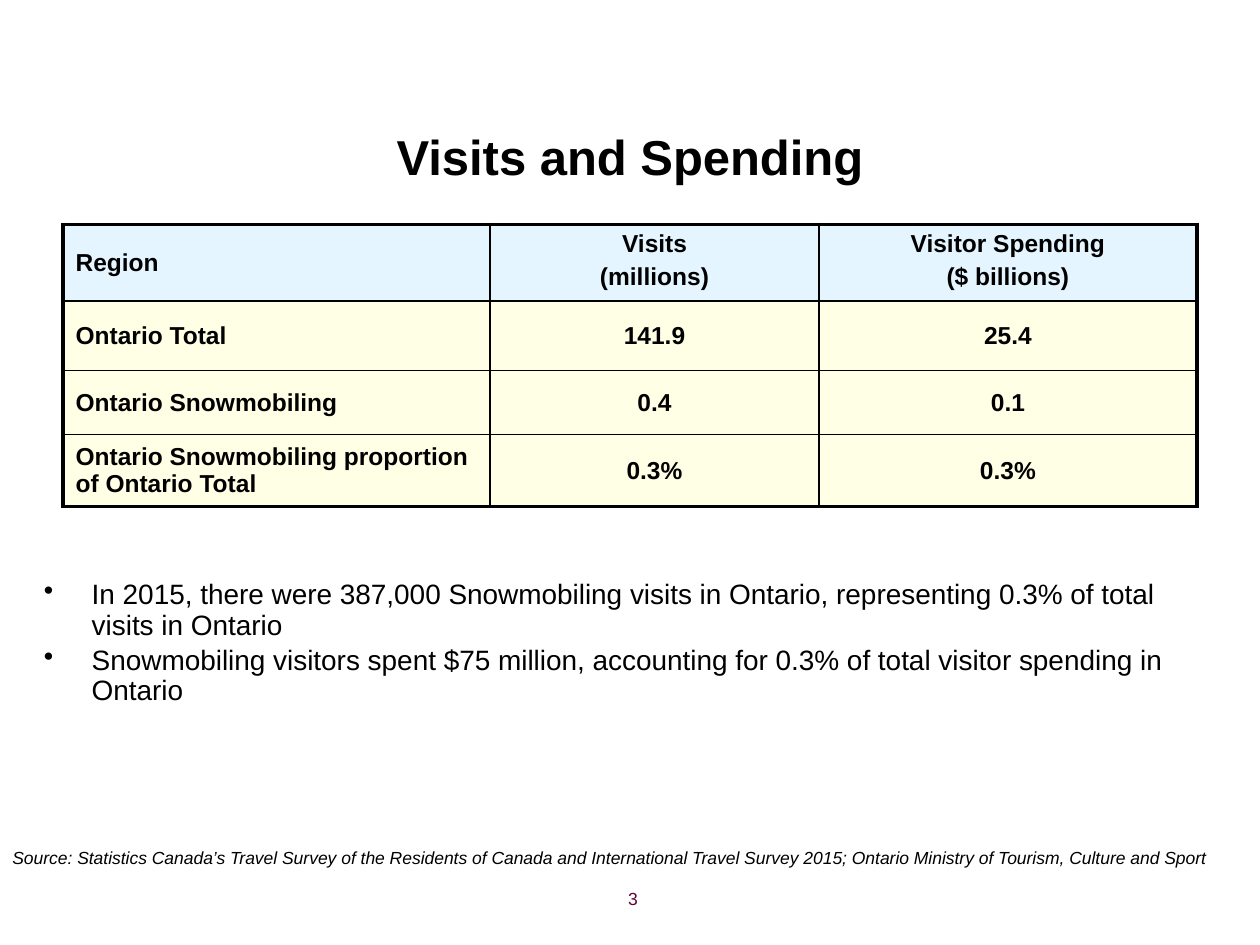
from lxml import etree
from pptx import Presentation
from pptx.dml.color import RGBColor
from pptx.enum.text import MSO_ANCHOR, PP_ALIGN
from pptx.oxml.ns import qn
from pptx.util import Inches, Pt

LEFT, MID, RIGHT = PP_ALIGN.LEFT, PP_ALIGN.CENTER, PP_ALIGN.RIGHT
TOP, CENTER = MSO_ANCHOR.TOP, MSO_ANCHOR.MIDDLE
BLACK = RGBColor(0x00, 0x00, 0x00)
WINE = RGBColor(0x66, 0x00, 0x33)
BLUE = RGBColor(0xCC, 0xEC, 0xFF)
CREAM = RGBColor(0xFF, 0xFF, 0xCC)
FONT = "Arial"
THIN, THICK = 1, 2.25

TITLE = "Visits and Spending"
ROWS = [
    (["Region"], ["Visits", "(millions)"], ["Visitor Spending", "($ billions)"]),
    (["Ontario Total"], ["141.9"], ["25.4"]),
    (["Ontario Snowmobiling"], ["0.4"], ["0.1"]),
    (["Ontario Snowmobiling proportion of Ontario Total"], ["0.3%"], ["0.3%"]),
]
WIDTHS = [3.39, 2.61, 3]
HEIGHTS = [0.61, 0.55, 0.51, 0.57]
POINTS = [
    "In 2015, there were 387,000 Snowmobiling visits in Ontario, "
    "representing 0.3% of total visits in Ontario",
    "Snowmobiling visitors spent $75 million, accounting for 0.3% "
    "of total visitor spending in Ontario",
]
SOURCE = (
    "Source: Statistics Canada’s Travel Survey of the Residents of Canada and "
    "International Travel Survey 2015; Ontario Ministry of Tourism, Culture and Sport"
)
PAGE = "3"


def write(frame, lines, size, align=LEFT, color=BLACK, bold=False,
          italic=False, bullet=False):
    frame.word_wrap = True
    for i, line in enumerate(lines):
        para = frame.paragraphs[0] if i == 0 else frame.add_paragraph()
        if bullet:
            props = para._p.get_or_add_pPr()
            props.set("marL", str(Inches(0.38)))
            props.set("indent", str(Inches(-0.38)))
            etree.SubElement(props, qn("a:buChar")).set("char", "•")
            para.line_spacing = 0.9
        para.alignment = align
        para.space_before = Pt(3 if i else 0)
        run = para.add_run()
        run.text = line
        font = run.font
        font.name, font.size = FONT, Pt(size)
        font.bold, font.italic = bold, italic
        font.color.rgb = color


def add_text(slide, box, lines, size, **style):
    shape = slide.shapes.add_textbox(*map(Inches, box))
    write(shape.text_frame, lines, size, **style)


def paint(cell, color, edges):
    cell.fill.solid()
    cell.fill.fore_color.rgb = color
    props = cell._tc.get_or_add_tcPr()
    tint = props.find(".//" + qn("a:srgbClr"))
    etree.SubElement(tint, qn("a:alpha")).set("val", "50000")
    for i, (side, width) in enumerate(edges.items()):
        line = etree.Element(qn("a:ln" + side), w=str(Pt(width)))
        fill = etree.SubElement(line, qn("a:solidFill"))
        etree.SubElement(fill, qn("a:srgbClr")).set("val", str(BLACK))
        props.insert(i, line)


def add_grid(slide):
    box = map(Inches, (0.5, 1.78, sum(WIDTHS), sum(HEIGHTS)))
    table = slide.shapes.add_table(len(ROWS), len(WIDTHS), *box).table
    for col, width in zip(table.columns, WIDTHS):
        col.width = Inches(width)
    for row, height in zip(table.rows, HEIGHTS):
        row.height = Inches(height)
    end, foot = len(WIDTHS) - 1, len(ROWS) - 1
    for r, row in enumerate(ROWS):
        for c, lines in enumerate(row):
            cell = table.cell(r, c)
            value = r > 0 and c > 0
            cell.margin_left = cell.margin_right = Inches(0 if value else 0.1)
            cell.margin_top = cell.margin_bottom = Inches(0 if value else 0.05)
            cell.vertical_anchor = TOP if r == 0 and c > 0 else CENTER
            write(cell.text_frame, lines, 14, align=MID if c else LEFT, bold=True)
            outer = {"L": c == 0, "R": c == end, "T": r == 0, "B": r == foot}
            edges = {side: THICK if out else THIN for side, out in outer.items()}
            paint(cell, CREAM if r else BLUE, edges)


def main():
    deck = Presentation()
    deck.slide_width, deck.slide_height = Inches(10), Inches(7.5)
    slide = deck.slides.add_slide(deck.slide_layouts[5])
    title = slide.shapes.title
    title.left, title.top = Inches(0.5), Inches(0.86)
    title.width, title.height = Inches(9), Inches(0.75)
    title.text_frame.vertical_anchor = CENTER
    write(title.text_frame, [TITLE], 28, align=MID, bold=True)
    add_text(slide, (0.25, 4.56, 9.5, 1.85), POINTS, 16, bullet=True)
    add_grid(slide)
    add_text(slide, (2.83, 7, 2.33, 0.35), [PAGE], 10, align=RIGHT, color=WINE)
    add_text(slide, (0, 6.67, 9.8, 0.27), [SOURCE], 10, italic=True)
    deck.save("out.pptx")


if __name__ == "__main__":
    main()
